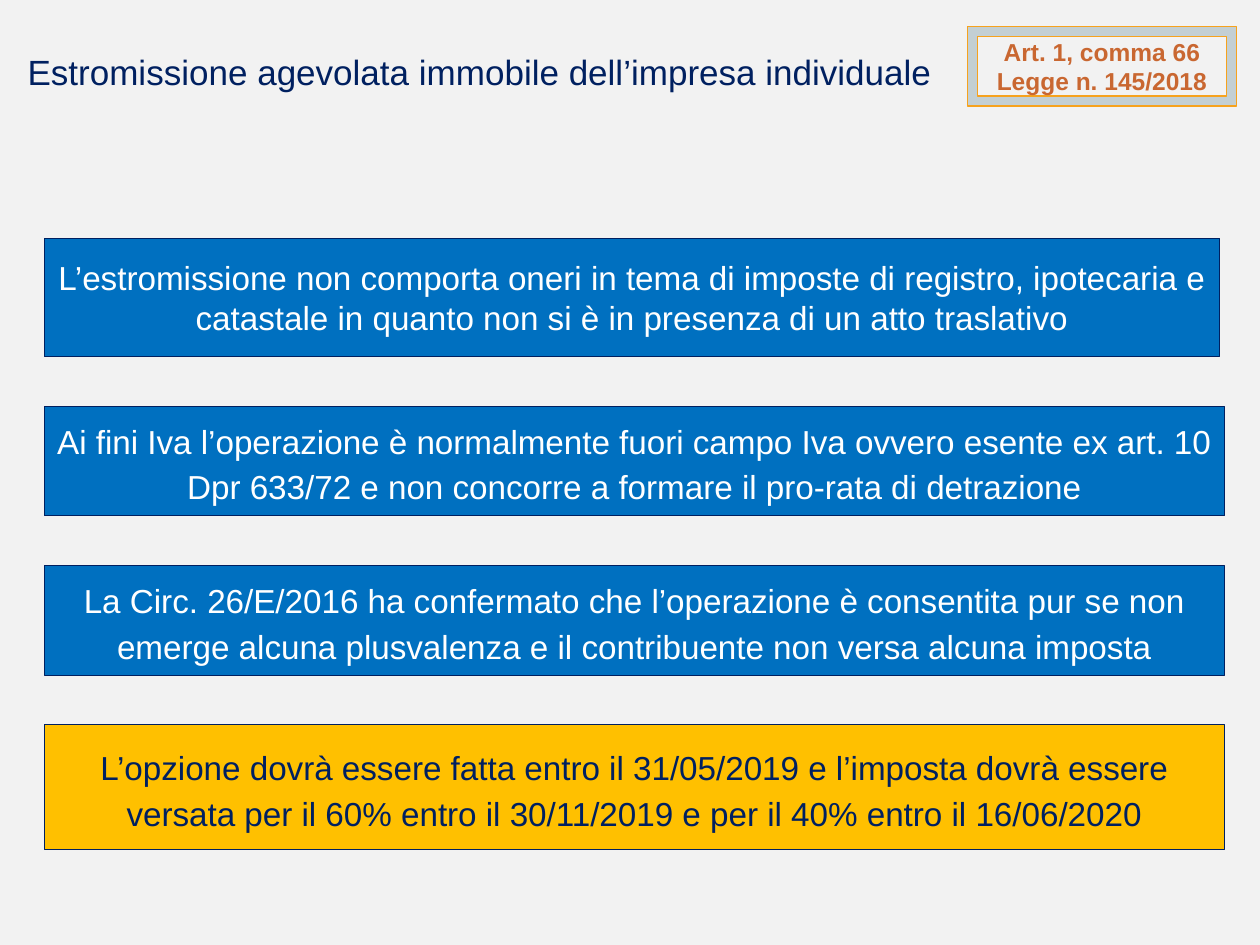
import pptx
import pptx.util
import pptx.dml.color
import pptx.enum.shapes
import pptx.enum.text

Pt = pptx.util.Pt
SHAPES = pptx.enum.shapes.MSO_SHAPE
ALIGN = pptx.enum.text.PP_ALIGN
FONT = "Arial"
COLORS = {"background": "F2F2F2", "navy": "002060", "blue": "0070C0",
          "amber": "FFC000", "white": "FFFFFF", "gray": "C3CFD3",
          "orange": "F6A21D", "rust": "C96731"}

# Content
TITLE = "Estromissione agevolata immobile dell’impresa individuale"
LAW = "Art. 1, comma 66 Legge n. 145/2018"
# text, fill, text colour, width, height, line spacing
BOXES = [
    ("L’estromissione non comporta oneri in tema di imposte di registro, ipotecaria e "
     "catastale in quanto non si è in presenza di un atto traslativo",
     "blue", "white", 671.8, 67.7, None),
    ("Ai fini Iva l’operazione è normalmente fuori campo Iva ovvero esente ex art. 10 "
     "Dpr 633/72 e non concorre a formare il pro-rata di detrazione",
     "blue", "white", 674.7, 62.6, 26),
    ("La Circ. 26/E/2016 ha confermato che l’operazione è consentita pur se non "
     "emerge alcuna plusvalenza e il contribuente non versa alcuna imposta",
     "blue", "white", 674.7, 62.6, 26),
    ("L’opzione dovrà essere fatta entro il 31/05/2019 e l’imposta dovrà essere "
     "versata per il 60% entro il 30/11/2019 e per il 40% entro il 16/06/2020",
     "amber", "navy", 674.7, 71.3, 26),
]
BOX_LEFT, BOX_TOP, BOX_GAP = 25.2, 136.1, 28.4


def color(name):
    return pptx.dml.color.RGBColor.from_string(COLORS[name])


def write(shape, text, size, color_name, align, bold=False, spacing=None):
    frame = shape.text_frame
    frame.word_wrap = True
    frame.vertical_anchor = pptx.enum.text.MSO_ANCHOR.MIDDLE
    paragraph = frame.paragraphs[0]
    paragraph.alignment = align
    if spacing:
        paragraph.line_spacing = Pt(spacing)
    run = paragraph.add_run()
    run.text = text
    run.font.name = FONT
    run.font.size = Pt(size)
    run.font.bold = bold
    run.font.color.rgb = color(color_name)


def add_panel(slide, kind, place, fill, line, line_width):
    shape = slide.shapes.add_shape(kind, *map(Pt, place))
    shape.shadow.inherit = False
    shape.fill.solid()
    shape.fill.fore_color.rgb = color(fill)
    shape.line.color.rgb = color(line)
    shape.line.width = Pt(line_width)
    return shape


presentation = pptx.Presentation()
presentation.slide_width, presentation.slide_height = Pt(720), Pt(540)
slide = presentation.slides.add_slide(presentation.slide_layouts[6])
slide.background.fill.solid()
slide.background.fill.fore_color.rgb = color("background")

# Title
title = slide.shapes.add_textbox(Pt(8.64), Pt(27.4), Pt(538.6), Pt(27.4))
write(title, TITLE, 20, "navy", ALIGN.LEFT)

# Stacked statements
top = BOX_TOP
for text, fill, text_color, width, height, spacing in BOXES:
    box = add_panel(slide, SHAPES.RECTANGLE, (BOX_LEFT, top, width, height),
                    fill, "navy", 0.5)
    write(box, text, 19, text_color, ALIGN.CENTER, spacing=spacing)
    top += height + BOX_GAP

# Law reference
law = add_panel(slide, SHAPES.FRAME, (553, 15.1, 153.4, 45.4), "gray", "orange", 0.75)
write(law, LAW, 14, "rust", ALIGN.CENTER, bold=True)

presentation.save("out.pptx")
